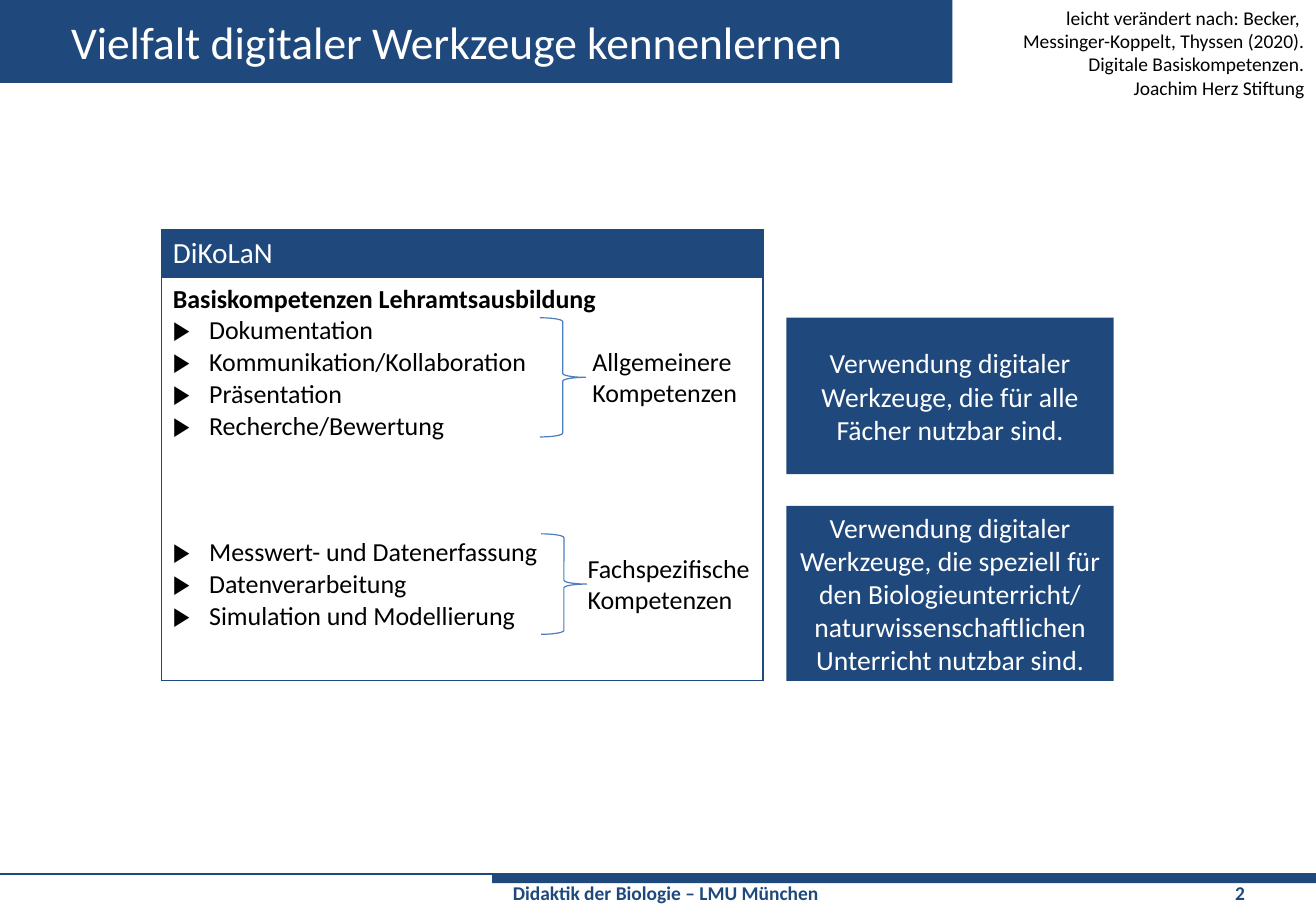
from lxml import etree
from pptx import Presentation
from pptx import util as u
from pptx.dml.color import RGBColor
from pptx.enum import shapes, text
from pptx.oxml.ns import qn

NAVY, WHITE, BLACK, BRACE_BLUE = "1F497D", "FFFFFF", "000000", "4B7EBC"
LEFT, CENTER, RIGHT = text.PP_ALIGN.LEFT, text.PP_ALIGN.CENTER, text.PP_ALIGN.RIGHT
TOP, MIDDLE = text.MSO_ANCHOR.TOP, text.MSO_ANCHOR.MIDDLE


def color(value):
    return RGBColor.from_string(value)


def write(frame, lines, size, ink, align=LEFT, anchor=TOP, bold=False):
    frame.word_wrap = True
    frame.vertical_anchor = anchor
    frame.text = "\n".join(lines)
    for paragraph in frame.paragraphs:
        paragraph.alignment = align
        for run in paragraph.runs:
            run.font.name = "Calibri"
            run.font.size = u.Pt(size)
            run.font.bold = bold
            run.font.color.rgb = color(ink)


prs = Presentation()
prs.slide_width, prs.slide_height = u.Pt(810.75), u.Pt(567)
slide = prs.slides.add_slide(prs.slide_layouts[6])
canvas = slide.shapes

footer_rule = canvas.add_connector(
    shapes.MSO_CONNECTOR.STRAIGHT, 0, u.Inches(7.48), prs.slide_width, u.Inches(7.48))
footer_rule.line.color.rgb = color(NAVY)
footer_rule.line.width = u.Pt(1)
etree.SubElement(footer_rule._element.spPr, qn("a:effectLst"))

general_use = "Verwendung digitaler Werkzeuge, die für alle Fächer nutzbar sind."
subject_use = ("Verwendung digitaler Werkzeuge, die speziell für den Biologieunterricht/ "
               "naturwissenschaftlichen Unterricht nutzbar sind.")
for left, top, width, height, usage in [
    (0, 0, 8.15, 0.71, ""),
    (4.21, 7.48, 7.05, 0.08, ""),
    (6.73, 2.72, 2.8, 1.34, general_use),
    (6.73, 4.33, 2.8, 1.5, subject_use),
]:
    block = canvas.add_shape(shapes.MSO_SHAPE.RECTANGLE, u.Inches(left), u.Inches(top),
                             u.Inches(width), u.Inches(height))
    block.shadow.inherit = False
    block.fill.solid()
    block.fill.fore_color.rgb = color(NAVY)
    block.line.fill.background()
    if usage:
        write(block.text_frame, [usage], 17, WHITE, CENTER, MIDDLE)

competences = canvas.add_table(2, 1, u.Inches(1.38), u.Inches(1.97),
                               u.Inches(5.15), u.Inches(3.85)).table
competences.rows[0].height = u.Inches(0.4)
competences.rows[1].height = u.Inches(3.45)
heading, content = competences.cell(0, 0), competences.cell(1, 0)
write(heading.text_frame, ["DiKoLaN"], 18, WHITE)
write(content.text_frame, [
    "Basiskompetenzen Lehramtsausbildung",
    "Dokumentation", "Kommunikation/Kollaboration", "Präsentation", "Recherche/Bewertung",
    "Messwert- und Datenerfassung", "Datenverarbeitung", "Simulation und Modellierung",
], 16, BLACK)

for cell, background in [(heading, NAVY), (content, WHITE)]:
    properties = cell._tc.get_or_add_tcPr()
    for side in ("lnL", "lnR", "lnT", "lnB"):
        border = etree.SubElement(properties, qn(f"a:{side}"), w=str(u.Pt(1)))
        border_fill = etree.SubElement(border, qn("a:solidFill"))
        etree.SubElement(border_fill, qn("a:srgbClr"), val=NAVY)
    cell.fill.solid()
    cell.fill.fore_color.rgb = color(background)

subtitle, *skills = content.text_frame.paragraphs
subtitle.runs[0].font.bold = True
skills[4].space_before = u.Pt(58.5)
for skill in skills:
    indent = skill._p.get_or_add_pPr()
    indent.set("marL", str(u.Inches(0.31)))
    indent.set("indent", str(-u.Inches(0.31)))
    etree.SubElement(indent, qn("a:buFont"), typeface="Calibri")
    etree.SubElement(indent, qn("a:buChar"), char="▶")

for left, top, height in [(4.62, 2.72, 1.02), (4.63, 4.57, 0.86)]:
    brace = canvas.add_shape(shapes.MSO_SHAPE.RIGHT_BRACE, u.Inches(left), u.Inches(top),
                             u.Inches(0.39), u.Inches(height))
    brace.shadow.inherit = False
    brace.fill.background()
    brace.line.color.rgb = color(BRACE_BLUE)
    brace.line.width = u.Pt(0.75)

source = ["leicht verändert nach: Becker, ", "Messinger-Koppelt, Thyssen (2020).",
          "Digitale Basiskompetenzen.", "Joachim Herz Stiftung"]
for left, top, width, height, lines, size, ink, align, anchor in [
    (0.51, 0, 7.56, 0.71, ["Vielfalt digitaler Werkzeuge kennenlernen"], 28, WHITE, LEFT, MIDDLE),
    (6.43, 0, 4.83, 0.86, source, 12, BLACK, RIGHT, TOP),
    (4.97, 2.91, 1.46, 0.64, ["Allgemeinere", "Kompetenzen"], 16, BLACK, LEFT, TOP),
    (4.93, 4.68, 1.6, 0.64, ["Fachspezifische", "Kompetenzen"], 16, BLACK, LEFT, TOP),
]:
    label = canvas.add_textbox(u.Inches(left), u.Inches(top), u.Inches(width), u.Inches(height))
    write(label.text_frame, lines, size, ink, align, anchor)

footer = canvas.add_textbox(u.Inches(4.29), u.Inches(7.49), u.Inches(6.97), u.Inches(0.31))
write(footer.text_frame, ["Didaktik der Biologie – LMU München\t2"], 12, NAVY, bold=True)
tabs = etree.SubElement(footer.text_frame.paragraphs[0]._p.get_or_add_pPr(), qn("a:tabLst"))
etree.SubElement(tabs, qn("a:tab"), pos=str(u.Inches(6.18)), algn="l")

prs.save("out.pptx")
